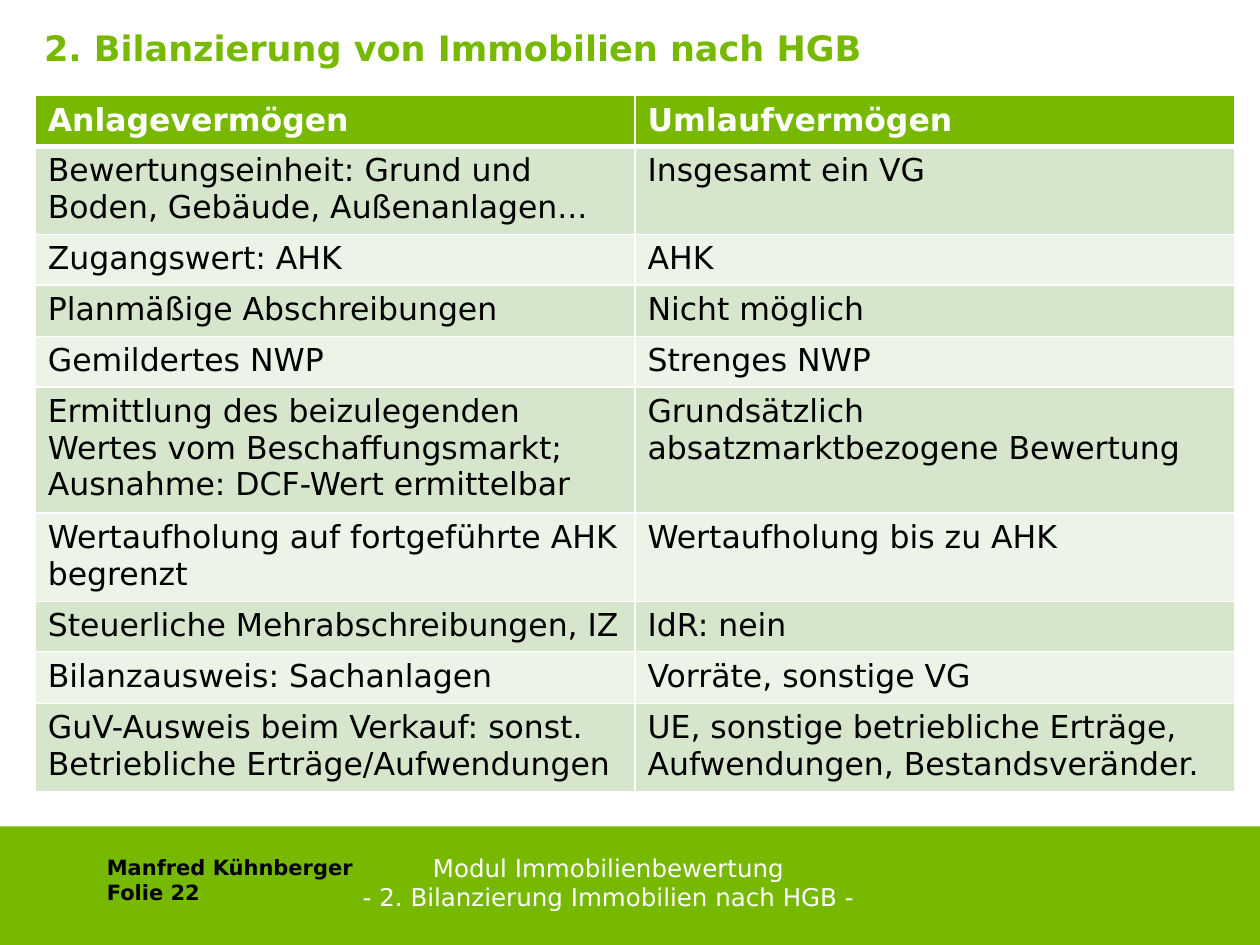
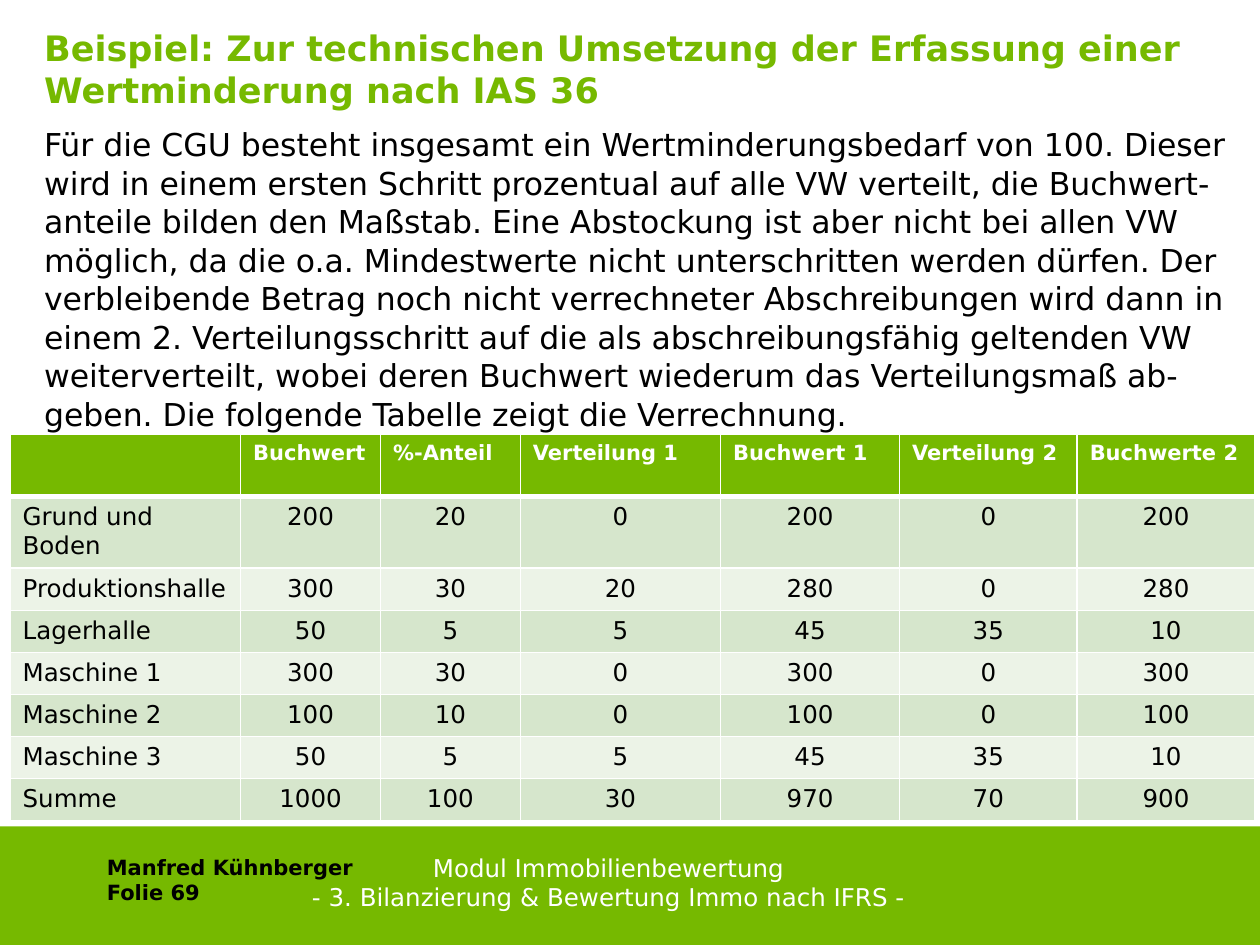
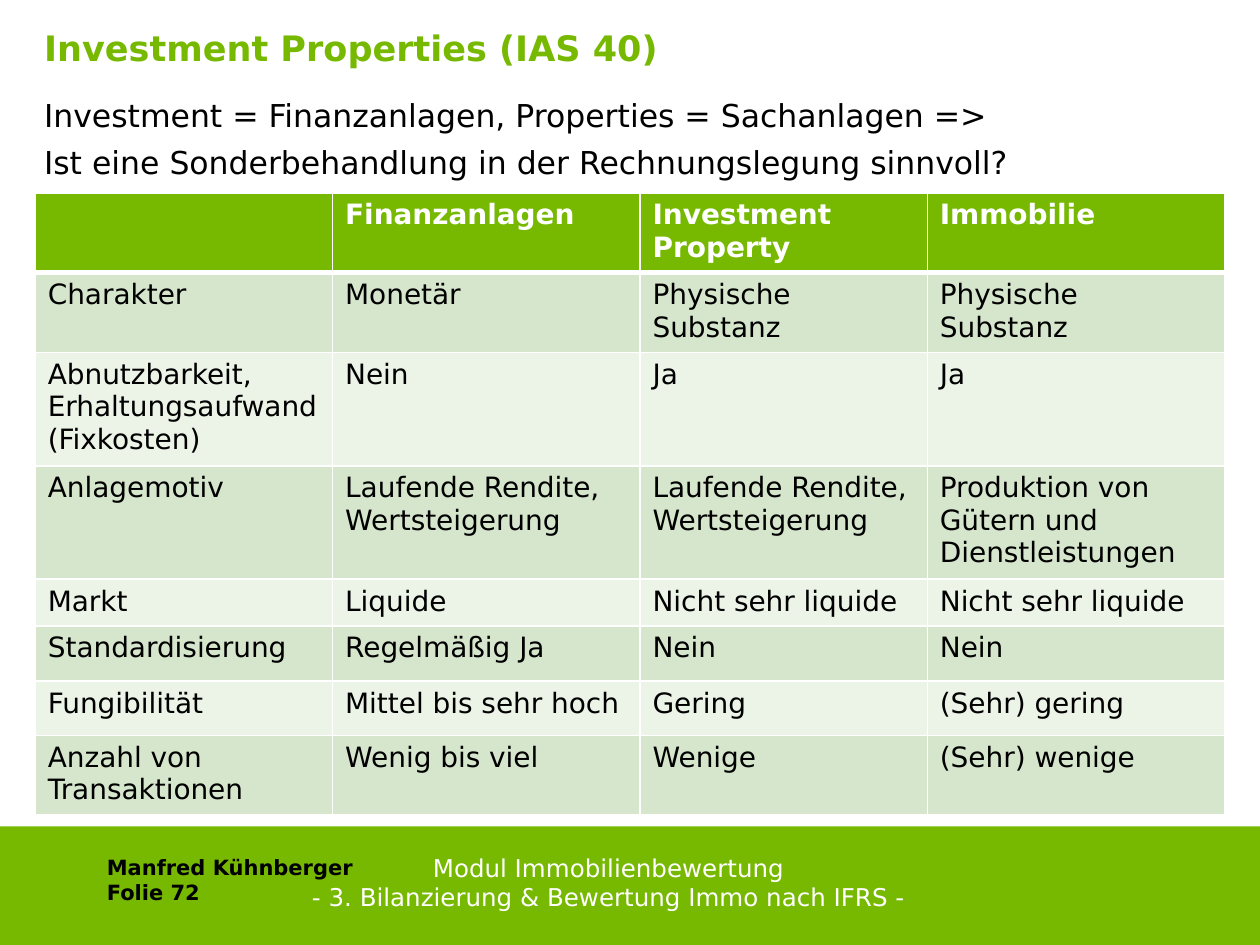
from dataclasses import dataclass

from lxml import etree
from pptx import Presentation
from pptx.dml.color import RGBColor
from pptx.enum import shapes, text
from pptx.oxml import ns
from pptx.util import Inches, Pt


@dataclass(frozen=True)
class Theme:
    """Colours, font and type sizes shared by all slides."""

    font: str = "DejaVu Sans"
    green: str = "76B900"
    dark_row: str = "D6E6CC"
    light_row: str = "ECF3E7"
    white: str = "FFFFFF"
    black: str = "000000"
    title_size: int = 20
    body_size: int = 18
    topic_size: int = 14
    author_size: int = 12
    border: int = 1
    header_border: int = 3


THEME = Theme()
TITLE_ONLY, TITLE_AND_BODY = 5, 1
MODULE = "Modul Immobilienbewertung"
AUTHOR = "Manfred Kühnberger"
HGB_TOPIC = "- 2. Bilanzierung Immobilien nach HGB -"
IFRS_TOPIC = "- 3. Bilanzierung & Bewertung Immo nach IFRS -"

HGB_ROWS = [
    ("Anlagevermögen", "Umlaufvermögen"),
    ("Bewertungseinheit: Grund und Boden, Gebäude, Außenanlagen...", "Insgesamt ein VG"),
    ("Zugangswert: AHK", "AHK"),
    ("Planmäßige Abschreibungen", "Nicht möglich"),
    ("Gemildertes NWP", "Strenges NWP"),
    ("Ermittlung des beizulegenden Wertes vom Beschaffungsmarkt; "
     "Ausnahme: DCF-Wert ermittelbar", "Grundsätzlich absatzmarktbezogene Bewertung"),
    ("Wertaufholung auf fortgeführte AHK begrenzt", "Wertaufholung bis zu AHK"),
    ("Steuerliche Mehrabschreibungen, IZ", "IdR: nein"),
    ("Bilanzausweis: Sachanlagen", "Vorräte, sonstige VG"),
    ("GuV-Ausweis beim Verkauf: sonst. Betriebliche Erträge/Aufwendungen",
     "UE, sonstige betriebliche Erträge, Aufwendungen, Bestandsveränder."),
]

IMPAIRMENT_TEXT = (
    "Für die CGU besteht insgesamt ein Wertminderungsbedarf von 100. Dieser wird in einem "
    "ersten Schritt prozentual auf alle VW verteilt, die Buchwert-anteile bilden den Maßstab. "
    "Eine Abstockung ist aber nicht bei allen VW möglich, da die o.a. Mindestwerte nicht "
    "unterschritten werden dürfen. Der verbleibende Betrag noch nicht verrechneter "
    "Abschreibungen wird dann in einem 2. Verteilungsschritt auf die als abschreibungsfähig "
    "geltenden VW weiterverteilt, wobei deren Buchwert wiederum das Verteilungsmaß ab-geben. "
    "Die folgende Tabelle zeigt die Verrechnung."
)

IMPAIRMENT_ROWS = [
    ("", "Buchwert", "%-Anteil", "Verteilung 1", "Buchwert 1", "Verteilung 2", "Buchwerte 2"),
    ("Grund und Boden", 200, 20, 0, 200, 0, 200),
    ("Produktionshalle", 300, 30, 20, 280, 0, 280),
    ("Lagerhalle", 50, 5, 5, 45, 35, 10),
    ("Maschine 1", 300, 30, 0, 300, 0, 300),
    ("Maschine 2", 100, 10, 0, 100, 0, 100),
    ("Maschine 3", 50, 5, 5, 45, 35, 10),
    ("Summe", 1000, 100, 30, 970, 70, 900),
]

PROPERTY_ROWS = [
    ("", "Finanzanlagen", "Investment Property", "Immobilie"),
    ("Charakter", "Monetär", "Physische Substanz", "Physische Substanz"),
    ("Abnutzbarkeit, Erhaltungsaufwand (Fixkosten)", "Nein", "Ja", "Ja"),
    ("Anlagemotiv", "Laufende Rendite, Wertsteigerung", "Laufende Rendite, Wertsteigerung",
     "Produktion von Gütern und Dienstleistungen"),
    ("Markt", "Liquide", "Nicht sehr liquide", "Nicht sehr liquide"),
    ("Standardisierung", "Regelmäßig Ja", "Nein", "Nein"),
    ("Fungibilität", "Mittel bis sehr hoch", "Gering", "(Sehr) gering"),
    ("Anzahl von Transaktionen", "Wenig bis viel", "Wenige", "(Sehr) wenige"),
]


def set_attributes(target, values):
    """Set every named attribute on the target."""
    for name, value in values.items():
        setattr(target, name, value)


def write(paragraph, content, size, color, bold=False):
    """Add one formatted run to a paragraph."""
    run = paragraph.add_run()
    run.text = content
    set_attributes(run.font, {"name": THEME.font, "size": Pt(size), "bold": bold})
    run.font.color.rgb = RGBColor.from_string(color)


def write_lines(frame, lines, size, color, bold=False, **paragraph_format):
    """Write one paragraph per line into a text frame."""
    for index, line in enumerate(lines):
        paragraph = frame.paragraphs[0] if index == 0 else frame.add_paragraph()
        set_attributes(paragraph, paragraph_format)
        if index == 0:
            paragraph.space_before = Pt(0)
        write(paragraph, line, size, color, bold)


def place(shape, left, top, width, height):
    """Move and size a shape in inches."""
    set_attributes(shape, {"left": Inches(left), "top": Inches(top),
                           "width": Inches(width), "height": Inches(height)})


def prepare_placeholder(placeholder, box):
    """Place a placeholder and give it a tight, top-aligned frame."""
    place(placeholder, *box)
    frame = placeholder.text_frame
    set_attributes(frame, {
        "margin_left": 0, "margin_right": 0, "margin_top": 0, "margin_bottom": 0,
        "word_wrap": True, "auto_size": text.MSO_AUTO_SIZE.NONE,
        "vertical_anchor": text.MSO_ANCHOR.TOP,
    })
    return frame


def fill_title(slide, title, width, height):
    """Fill the title placeholder."""
    frame = prepare_placeholder(slide.shapes.title, (0.35, 0.21, width, height))
    write_lines(frame, [title], THEME.title_size, THEME.green, True,
                alignment=text.PP_ALIGN.LEFT)


def fill_body(slide, lines, top, height):
    """Fill the body placeholder with unbulleted paragraphs."""
    frame = prepare_placeholder(slide.placeholders[1], (0.35, top, 9.53, height))
    write_lines(frame, lines, THEME.body_size, THEME.black,
                line_spacing=Pt(22), space_before=Pt(4.8))
    for paragraph in frame.paragraphs:
        properties = paragraph._p.get_or_add_pPr()
        properties.set("marL", "0")
        properties.set("indent", "0")
        etree.SubElement(properties, ns.qn("a:buNone"))


def add_band(slide):
    """Add the green band at the foot of the slide."""
    band = slide.shapes.add_shape(shapes.MSO_SHAPE.RECTANGLE, Inches(0), Inches(6.56),
                                  Inches(10), Inches(0.94))
    band.shadow.inherit = False
    band.fill.solid()
    band.fill.fore_color.rgb = RGBColor.from_string(THEME.green)
    band.line.fill.background()


def add_footer(slide, topic, topic_width, number):
    """Add the band with the module topic, the author and the slide number."""
    add_band(slide)
    center = 4.83
    topic_box = slide.shapes.add_textbox(Inches(center - topic_width / 2), Inches(6.72),
                                         Inches(topic_width), Inches(0.57))
    topic_box.text_frame.word_wrap = False
    write_lines(topic_box.text_frame, [MODULE, topic], THEME.topic_size, THEME.white,
                alignment=text.PP_ALIGN.CENTER)
    author_box = slide.shapes.add_textbox(Inches(0.75), Inches(6.73), Inches(2.36), Inches(0.49))
    author_box.text_frame.word_wrap = True
    write_lines(author_box.text_frame, [AUTHOR, f"Folie {number}"], THEME.author_size,
                THEME.black, True)


def set_borders(cell, top, bottom):
    """Draw white borders around a cell."""
    properties = cell._tc.get_or_add_tcPr()
    widths = {"a:lnL": THEME.border, "a:lnR": THEME.border, "a:lnT": top, "a:lnB": bottom}
    for tag, width in widths.items():
        line = etree.SubElement(properties, ns.qn(tag), w=str(Pt(width)))
        fill = etree.SubElement(line, ns.qn("a:solidFill"))
        etree.SubElement(fill, ns.qn("a:srgbClr"), val=THEME.white)


def format_cell(cell, row):
    """Give a cell the borders and fill of its row."""
    set_borders(cell, THEME.header_border if row == 1 else THEME.border,
                THEME.header_border if row == 0 else THEME.border)
    cell.fill.solid()
    band = THEME.dark_row if row % 2 else THEME.light_row
    cell.fill.fore_color.rgb = RGBColor.from_string(THEME.green if row == 0 else band)


def add_table(slide, rows, left, top, widths, heights, size, header_size=None):
    """Add a banded table; numbers are centred."""
    frame = slide.shapes.add_table(len(rows), len(widths), Inches(left), Inches(top),
                                   Inches(sum(widths)), Inches(sum(heights)))
    table = frame.table
    for column, width in zip(table.columns, widths):
        column.width = Inches(width)
    for table_row, height in zip(table.rows, heights):
        table_row.height = Inches(height)
    for row, values in enumerate(rows):
        is_header = row == 0
        for column, value in enumerate(values):
            cell = table.cell(row, column)
            format_cell(cell, row)
            if value == "":
                continue
            paragraph = cell.text_frame.paragraphs[0]
            if isinstance(value, int):
                paragraph.alignment = text.PP_ALIGN.CENTER
            write(paragraph, str(value), (header_size or size) if is_header else size,
                  THEME.white if is_header else THEME.black, is_header)


def add_slide(presentation, layout):
    """Add a slide with the given layout."""
    return presentation.slides.add_slide(presentation.slide_layouts[layout])


def build_hgb_slide(presentation):
    """Compare fixed and current assets under HGB."""
    slide = add_slide(presentation, TITLE_ONLY)
    fill_title(slide, "2. Bilanzierung von Immobilien nach HGB", 8.5, 0.41)
    add_footer(slide, HGB_TOPIC, 4.22, 22)
    add_table(slide, HGB_ROWS, 0.28, 0.76, [4.76] * 2,
              [0.4, 0.7, 0.4, 0.41, 0.4, 1, 0.7, 0.4, 0.41, 0.7], 18)


def build_impairment_slide(presentation):
    """Show how an impairment is allocated."""
    slide = add_slide(presentation, TITLE_AND_BODY)
    fill_title(slide, "Beispiel: Zur technischen Umsetzung der Erfassung einer "
               "Wertminderung nach IAS 36", 9.29, 0.79)
    add_footer(slide, IFRS_TOPIC, 5.07, 69)
    fill_body(slide, [IMPAIRMENT_TEXT], 0.99, 5.51)
    add_table(slide, IMPAIRMENT_ROWS, 0.08, 3.45, [1.83, 1.11, 1.11, 1.59, 1.42, 1.41, 1.41],
              [0.49, 0.57] + [0.33] * 6, 14, 12)


def build_property_slide(presentation):
    """Compare investment property with other assets."""
    slide = add_slide(presentation, TITLE_AND_BODY)
    fill_title(slide, "Investment Properties (IAS 40)", 9.29, 0.39)
    add_footer(slide, IFRS_TOPIC, 5.07, 72)
    fill_body(slide, ["Investment = Finanzanlagen, Properties = Sachanlagen =>",
                      "Ist eine Sonderbehandlung in der Rechnungslegung sinnvoll?"], 0.76, 0.79)
    add_table(slide, PROPERTY_ROWS, 0.28, 1.53, [2.36, 2.44, 2.28, 2.36],
              [0.63, 0.63, 0.9, 0.9, 0.37, 0.44, 0.43, 0.62], 16)


def main():
    """Build and save the presentation."""
    presentation = Presentation()
    set_attributes(presentation, {"slide_width": Inches(10), "slide_height": Inches(7.5)})
    build_hgb_slide(presentation)
    build_impairment_slide(presentation)
    build_property_slide(presentation)
    presentation.save("out.pptx")


if __name__ == "__main__":
    main()
